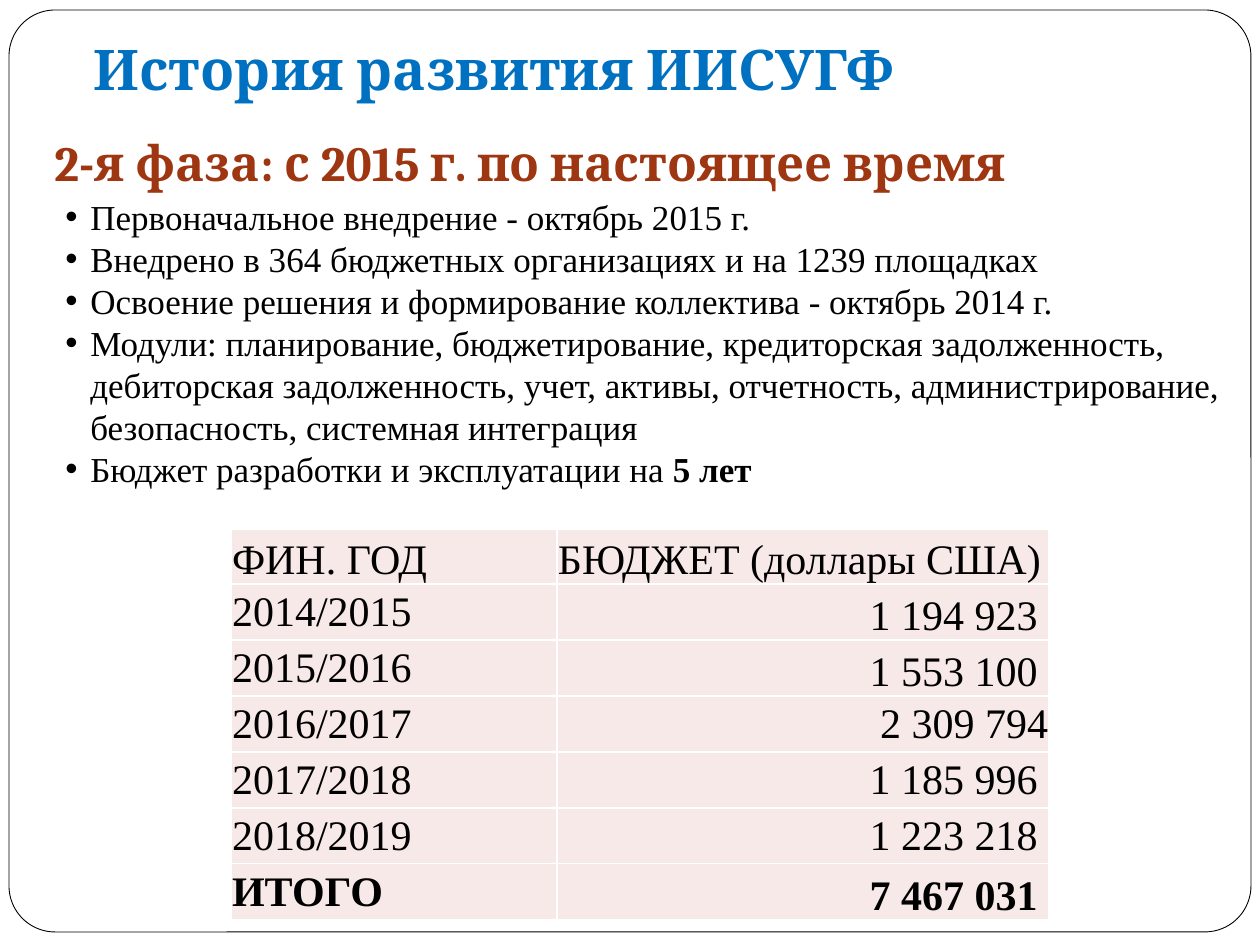
from dataclasses import dataclass
from typing import Any

from lxml.etree import SubElement
from pptx import Presentation
from pptx.dml.color import RGBColor
from pptx.enum.shapes import MSO_SHAPE
from pptx.enum.text import MSO_ANCHOR, PP_ALIGN
from pptx.oxml.ns import qn
from pptx.util import Emu, Pt

PX_PER_INCH = 126
HEADING_FONT, BODY_FONT = "Cambria", "Times New Roman"
BLACK, WHITE, BLUE, RUST, BLUSH = "000000", "FFFFFF", "0070C0", "9E3611", "F7E9E8"


@dataclass(frozen=True)
class Box:
    left: int
    top: int
    width: int
    height: int

    def emu(self) -> tuple[Emu, ...]:
        return tuple(map(px, (self.left, self.top, self.width, self.height)))


@dataclass(frozen=True)
class TextStyle:
    size: int
    font: str
    color: str
    bold: bool = False


@dataclass(frozen=True)
class BudgetRow:
    year: str
    amount: str
    year_anchor: MSO_ANCHOR = MSO_ANCHOR.MIDDLE
    amount_anchor: MSO_ANCHOR = MSO_ANCHOR.MIDDLE
    amount_align: PP_ALIGN = PP_ALIGN.RIGHT
    bold: bool = False


TITLE = TextStyle(32, HEADING_FONT, BLUE, True)
PHASE = TextStyle(28, HEADING_FONT, RUST, True)
FACT = TextStyle(20, BODY_FONT, BLACK)
FACT_STRONG = TextStyle(20, BODY_FONT, BLACK, True)

FACTS = [
    [("Первоначальное внедрение - октябрь 2015 г.", FACT)],
    [("Внедрено в 364 бюджетных организациях и на 1239 площадках", FACT)],
    [("Освоение решения и формирование коллектива - октябрь 2014 г.", FACT)],
    [("Модули: планирование, бюджетирование, кредиторская задолженность, "
      "дебиторская задолженность, учет, активы, отчетность, администрирование, "
      "безопасность, системная интеграция", FACT)],
    [("Бюджет разработки и эксплуатации на ", FACT), ("5 лет", FACT_STRONG)],
]

BOTTOM = MSO_ANCHOR.BOTTOM
BUDGET = [
    BudgetRow("ФИН. ГОД", "БЮДЖЕТ (доллары США)", BOTTOM, BOTTOM, PP_ALIGN.LEFT),
    BudgetRow("2014/2015", "1 194 923 ", amount_anchor=BOTTOM),
    BudgetRow("2015/2016", "1 553 100 ", amount_anchor=BOTTOM),
    BudgetRow("2016/2017", "2 309 794"),
    BudgetRow("2017/2018", "1 185 996 "),
    BudgetRow("2018/2019", "1 223 218 "),
    BudgetRow("ИТОГО", "7 467 031 ", amount_anchor=BOTTOM, bold=True),
]
COLUMN_WIDTHS = (326, 492)
HEADER_HEIGHT, ROW_HEIGHT = 55, 56


def px(length: int) -> Emu:
    return Emu(round(length * 914400 / PX_PER_INCH))


def rgb(color: str) -> RGBColor:
    return RGBColor.from_string(color)


def set_all(target: Any, values: dict[str, Any]) -> None:
    for name, value in values.items():
        setattr(target, name, value)


def add_run(paragraph: Any, text: str, style: TextStyle) -> None:
    run = paragraph.add_run()
    run.text = text
    set_all(run.font, {"size": Pt(style.size), "name": style.font, "bold": style.bold})
    run.font.color.rgb = rgb(style.color)


def add_bullet(paragraph: Any, indent: int) -> None:
    properties = paragraph._p.get_or_add_pPr()
    properties.set("marL", str(px(indent)))
    properties.set("indent", str(-px(indent)))
    SubElement(properties, qn("a:buFont"), typeface="Arial")
    SubElement(properties, qn("a:buChar"), char="•")


def add_text(slide: Any, box: Box, paragraphs: list, bullet_indent: int = 0,
             **frame_format: Any) -> None:
    frame = slide.shapes.add_textbox(*box.emu()).text_frame
    set_all(frame, {"word_wrap": True, **frame_format})
    for index, runs in enumerate(paragraphs):
        paragraph = frame.add_paragraph() if index else frame.paragraphs[0]
        if bullet_indent:
            add_bullet(paragraph, bullet_indent)
        for text, style in runs:
            add_run(paragraph, text, style)


def add_frame(slide: Any, box: Box) -> None:
    frame = slide.shapes.add_shape(MSO_SHAPE.ROUNDED_RECTANGLE, *box.emu())
    frame.adjustments[0] = 0.05
    frame.shadow.inherit = False
    frame.fill.solid()
    frame.fill.fore_color.rgb = rgb(WHITE)
    frame.line.color.rgb = rgb(BLACK)
    frame.line.width = Pt(0.5)


def add_borders(cell: Any, color: str) -> None:
    """Call before the cell is filled: borders come first in the cell's XML."""
    properties = cell._tc.get_or_add_tcPr()
    for side in ("lnL", "lnR", "lnT", "lnB"):
        line = SubElement(properties, qn(f"a:{side}"), w=str(Pt(1)))
        SubElement(SubElement(line, qn("a:solidFill")), qn("a:srgbClr"), val=color)


def fill_cell(cell: Any, text: str, bold: bool, anchor: MSO_ANCHOR,
              align: PP_ALIGN) -> None:
    add_borders(cell, WHITE)
    cell.fill.solid()
    cell.fill.fore_color.rgb = rgb(BLUSH)
    set_all(cell, {"margin_left": px(1), "margin_right": px(1), "margin_top": px(1),
                   "margin_bottom": 0, "vertical_anchor": anchor})
    paragraph = cell.text_frame.paragraphs[0]
    paragraph.alignment = align
    add_run(paragraph, text, TextStyle(24, BODY_FONT, BLACK, bold))


def add_budget_table(slide: Any, left: int, top: int) -> None:
    heights = [HEADER_HEIGHT] + [ROW_HEIGHT] * (len(BUDGET) - 1)
    box = Box(left, top, sum(COLUMN_WIDTHS), sum(heights))
    table = slide.shapes.add_table(len(BUDGET), len(COLUMN_WIDTHS), *box.emu()).table
    set_all(table, {"first_row": False, "horz_banding": False})
    for column, width in zip(table.columns, COLUMN_WIDTHS):
        column.width = px(width)
    for row, height, entry in zip(table.rows, heights, BUDGET):
        row.height = px(height)
        year, amount = row.cells
        fill_cell(year, entry.year, entry.bold, entry.year_anchor, PP_ALIGN.LEFT)
        fill_cell(amount, entry.amount, entry.bold, entry.amount_anchor,
                  entry.amount_align)


def main() -> None:
    presentation = Presentation()
    set_all(presentation, {"slide_width": px(1260), "slide_height": px(945)})
    slide = presentation.slides.add_slide(presentation.slide_layouts[6])
    add_frame(slide, Box(9, 10, 1242, 922))
    add_text(slide, Box(42, 126, 1187, 72),
             [[("2-я фаза: с 2015 г. по настоящее время", PHASE)]])
    add_text(slide, Box(53, 189, 1250, 310), FACTS, bullet_indent=25)
    add_budget_table(slide, 231, 529)
    add_text(slide, Box(81, 37, 1071, 78), [[("История развития ИИСУГФ", TITLE)]],
             vertical_anchor=BOTTOM, margin_bottom=px(13))
    presentation.save("out.pptx")


if __name__ == "__main__":
    main()
